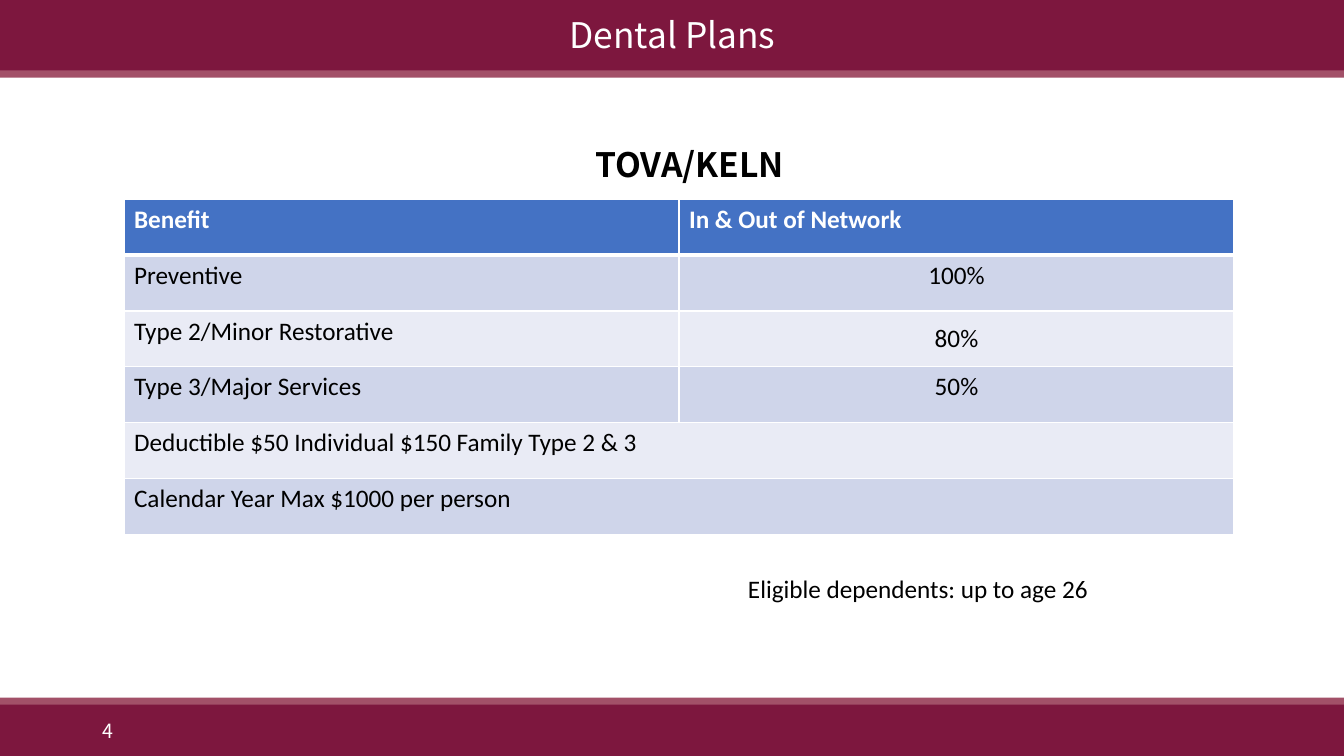
from dataclasses import dataclass

from lxml.etree import SubElement
from pptx import Presentation
from pptx.dml.color import RGBColor
from pptx.enum.shapes import MSO_SHAPE
from pptx.enum.text import MSO_ANCHOR as ANCHOR, MSO_AUTO_SIZE as FIT, PP_ALIGN as ALIGN
from pptx.oxml.ns import qn
from pptx.util import Inches, Pt


@dataclass(frozen=True)
class Theme:
    band: str = "7D173E"
    band_edge: str = "A25068"
    header: str = "4472C4"
    rows: tuple = ("CFD5EA", "E9EBF5")
    white: str = "FFFFFF"
    black: str = "000000"
    heading_font: str = "Noto Sans CJK KR"
    body_font: str = "Calibri"
    title_size: float = 25.2
    plan_size: float = 24
    body_size: float = 18
    number_size: float = 14


def write(tf, text, *, size, color, font, bold=False, align=ALIGN.LEFT,
          anchor=ANCHOR.TOP, spacing=None):
    """Put one formatted paragraph into a text frame."""
    tf.word_wrap = True
    tf.vertical_anchor = anchor
    p = tf.paragraphs[0]
    p.alignment = align
    if spacing:
        p.line_spacing = spacing
    r = p.add_run()
    r.text = text
    r.font.name, r.font.size, r.font.bold = font, Pt(size), bold
    r.font.color.rgb = RGBColor.from_string(color)


def set_borders(cell, color, top=1, bottom=1):
    """Draw the four cell borders, with widths in points."""
    tc_pr = cell._tc.get_or_add_tcPr()
    sides = (("a:lnL", 1), ("a:lnR", 1), ("a:lnT", top), ("a:lnB", bottom))
    for i, (tag, width) in enumerate(sides):
        ln = SubElement(tc_pr, qn(tag), w=str(Pt(width)))
        SubElement(SubElement(ln, qn("a:solidFill")), qn("a:srgbClr"), val=color)
        tc_pr.insert(i, ln)


class SlideBuilder:
    def __init__(self, prs, theme):
        self.theme = theme
        self.width = prs.slide_width
        self.s = prs.slides.add_slide(prs.slide_layouts[5])

    def band(self, top, height, color):
        sp = self.s.shapes.add_shape(MSO_SHAPE.RECTANGLE, 0, Inches(top),
                                     self.width, Inches(height))
        sp.shadow.inherit = False
        sp.fill.solid()
        sp.fill.fore_color.rgb = RGBColor.from_string(color)
        sp.line.fill.background()

    def title(self, text, left, top, width, height):
        sp = self.s.shapes.title
        sp.left, sp.top, sp.width, sp.height = map(Inches, (left, top, width, height))
        sp.text_frame.auto_size = FIT.NONE
        write(sp.text_frame, text, size=self.theme.title_size, color=self.theme.white,
              font=self.theme.heading_font, align=ALIGN.CENTER,
              anchor=ANCHOR.MIDDLE, spacing=0.9)
        sp.element.getparent().append(sp.element)  # in front of the bands

    def text(self, text, left, top, width, height, **style):
        sp = self.s.shapes.add_textbox(*map(Inches, (left, top, width, height)))
        write(sp.text_frame, text, **style)

    def table(self, rows, left, top, width, height):
        """Rows with a single text span both columns; the first row is the header."""
        th = self.theme
        frame = self.s.shapes.add_table(len(rows), 2,
                                        *map(Inches, (left, top, width, height)))
        tbl = frame.table
        for i, texts in enumerate(rows):
            header = i == 0
            fill = th.header if header else th.rows[(i - 1) % 2]
            if len(texts) == 1:
                tbl.cell(i, 0).merge(tbl.cell(i, 1))
            for j in range(2):
                cell = tbl.cell(i, j)
                cell.fill.solid()
                cell.fill.fore_color.rgb = RGBColor.from_string(fill)
                set_borders(cell, th.white, top=3 if i == 1 else 1,
                            bottom=3 if header else 1)
            for j, text in enumerate(texts):
                cell = tbl.cell(i, j)
                write(cell.text_frame, text, size=th.body_size, font=th.body_font,
                      color=th.white if header else th.black, bold=header,
                      align=ALIGN.CENTER if j and not header else ALIGN.LEFT)
        return tbl


def main():
    prs = Presentation()
    prs.slide_width, prs.slide_height = Inches(13.33), Inches(7.5)
    th = Theme()
    slide = SlideBuilder(prs, th)

    slide.band(6.92, 0.58, th.band_edge)
    slide.band(6.99, 0.51, th.band)
    slide.band(0.07, 0.7, th.band_edge)
    slide.band(0, 0.7, th.band)
    slide.title("Dental Plans", 0.92, 0.15, 11.5, 0.43)

    slide.text("TOVA/KELN", 1.45, 1.3, 10.78, 0.68, size=th.plan_size, color=th.black,
               font=th.heading_font, bold=True, align=ALIGN.CENTER, spacing=1.2)
    tbl = slide.table([
        ("Benefit", "In & Out of Network"),
        ("Preventive", "100%"),
        ("Type 2/Minor Restorative", "80%"),
        ("Type 3/Major Services", "50%"),
        ("Deductible $50 Individual $150 Family Type 2 & 3",),
        ("Calendar Year Max $1000 per person",),
    ], 1.23, 1.98, 11.01, 3.32)
    tbl.cell(2, 1).vertical_anchor = ANCHOR.MIDDLE

    slide.text("Eligible dependents: up to age 26", 7.32, 5.64, 4.31, 0.4,
               size=th.body_size, color=th.black, font=th.body_font)
    slide.text("4", 0.92, 7.09, 3, 0.31, size=th.number_size, color=th.white,
               font=th.heading_font, anchor=ANCHOR.MIDDLE)
    prs.save("out.pptx")


if __name__ == "__main__":
    main()
